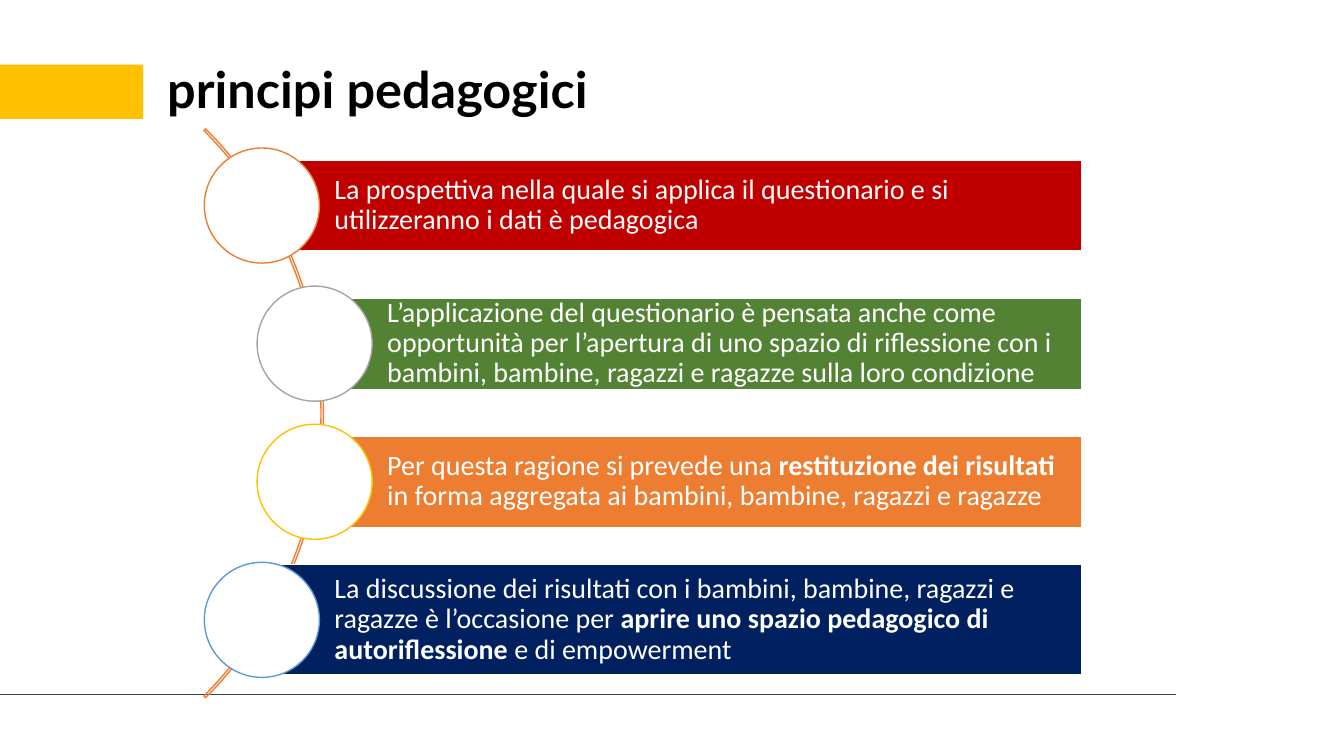
from pptx import Presentation
from pptx.dml.color import RGBColor
from pptx.enum.shapes import MSO_CONNECTOR, MSO_SHAPE
from pptx.enum.text import MSO_ANCHOR, MSO_AUTO_SIZE, PP_ALIGN
from pptx.oxml.ns import qn
from pptx.util import Cm, Pt
from lxml import etree

RECT, OVAL, ARC = MSO_SHAPE.RECTANGLE, MSO_SHAPE.OVAL, MSO_SHAPE.BLOCK_ARC
STRAIGHT = MSO_CONNECTOR.STRAIGHT
TOP, MIDDLE = MSO_ANCHOR.TOP, MSO_ANCHOR.MIDDLE
LEFT, NO_FIT = PP_ALIGN.LEFT, MSO_AUTO_SIZE.NONE


def rgb(value):
    return RGBColor.from_string(value)


def add_shape(kind, x, y, w, h, fill=None, line=None):
    sp = s.shapes.add_shape(kind, Cm(x), Cm(y), Cm(w), Cm(h))
    sp.shadow.inherit = False
    if fill:
        sp.fill.solid()
        sp.fill.fore_color.rgb = rgb(fill)
    else:
        sp.fill.background()
    if line:
        sp.line.color.rgb = rgb(line)
        sp.line.width = Pt(1)
    else:
        sp.line.fill.background()
    return sp


prs = Presentation()
prs.slide_width, prs.slide_height = Cm(33.87), Cm(19.05)
s = prs.slides.add_slide(prs.slide_layouts[5])

# Title
title = s.shapes.title
title.left, title.top, title.width, title.height = Cm(3.96), Cm(1.52), Cm(15.42), Cm(1.35)
tf = title.text_frame
tf.text = "principi pedagogici"
tf.word_wrap, tf.auto_size, tf.vertical_anchor = True, NO_FIT, TOP
p = tf.paragraphs[0]
p.alignment, p.line_spacing, p.space_before = LEFT, 0.9, Pt(0)
font = p.runs[0].font
font.name, font.size, font.bold = "Lato", Pt(36), True
font.color.rgb = rgb("000000")

# Yellow tab and bottom rule
add_shape(RECT, 0, 1.63, 3.61, 1.37, "FFC000")
rule = s.shapes.add_connector(STRAIGHT, Cm(0), Cm(17.5), Cm(29.64), Cm(17.5))
rule.line.color.rgb = rgb("404140")
rule.line.width = Pt(1)
etree.SubElement(rule._element.spPr, qn("a:effectLst"))

# Arc behind the circles
arc = add_shape(ARC, -12.12, 0.28, 20.27, 20.27, line="ED7D31")
for i, value in enumerate((189, 27, 0.003)):
    arc.adjustments[i] = value

# Principles: bar left, bar height, bar colour, circle colour, (text, bold) runs
PRINCIPLES = [
    (6.6, 2.3, "C00000", "ED7D31", [
        ("La prospettiva nella quale si applica il questionario e si utilizzeranno "
         "i dati è pedagogica", False)]),
    (7.93, 2.3, "548235", "A5A5A5", [
        ("L’applicazione del questionario è pensata anche come opportunità per "
         "l’apertura di uno spazio di riflessione con i bambini, bambine, ragazzi "
         "e ragazze sulla loro condizione", False)]),
    (7.93, 2.3, "ED7D31", "FFC000", [
        ("Per questa ragione si prevede una ", False),
        ("restituzione dei risultati ", True),
        ("in forma aggregata ai bambini, bambine, ragazzi e ragazze", False)]),
    (6.6, 2.79, "002060", "5B9BD5", [
        ("La discussione dei risultati con i bambini, bambine, ragazzi e ragazze "
         "è l’occasione per ", False),
        ("aprire uno spazio pedagogico di autoriflessione ", True),
        ("e di empowerment", False)]),
]
BAR_RIGHT, DIAMETER = 27.27, 2.9
FIRST_CENTRE, PITCH = 5.18, 3.48

for i, (left, height, bar_colour, ring_colour, runs) in enumerate(PRINCIPLES):
    centre = FIRST_CENTRE + i * PITCH
    bar = add_shape(RECT, left, centre - height / 2, BAR_RIGHT - left, height,
                    bar_colour, "FFFFFF")
    tf = bar.text_frame
    tf.word_wrap, tf.vertical_anchor = True, MIDDLE
    tf.margin_left = Cm(1.83)
    tf.margin_top = tf.margin_right = tf.margin_bottom = Cm(0.15)
    p = tf.paragraphs[0]
    p.alignment, p.line_spacing = LEFT, 0.9
    for text, bold in runs:
        r = p.add_run()
        r.text = text
        r.font.name, r.font.size, r.font.bold = "Calibri", Pt(20), bold
        r.font.color.rgb = rgb("FFFFFF")
    add_shape(OVAL, left - DIAMETER / 2, centre - DIAMETER / 2, DIAMETER, DIAMETER,
              "FFFFFF", ring_colour)

prs.save("out.pptx")
